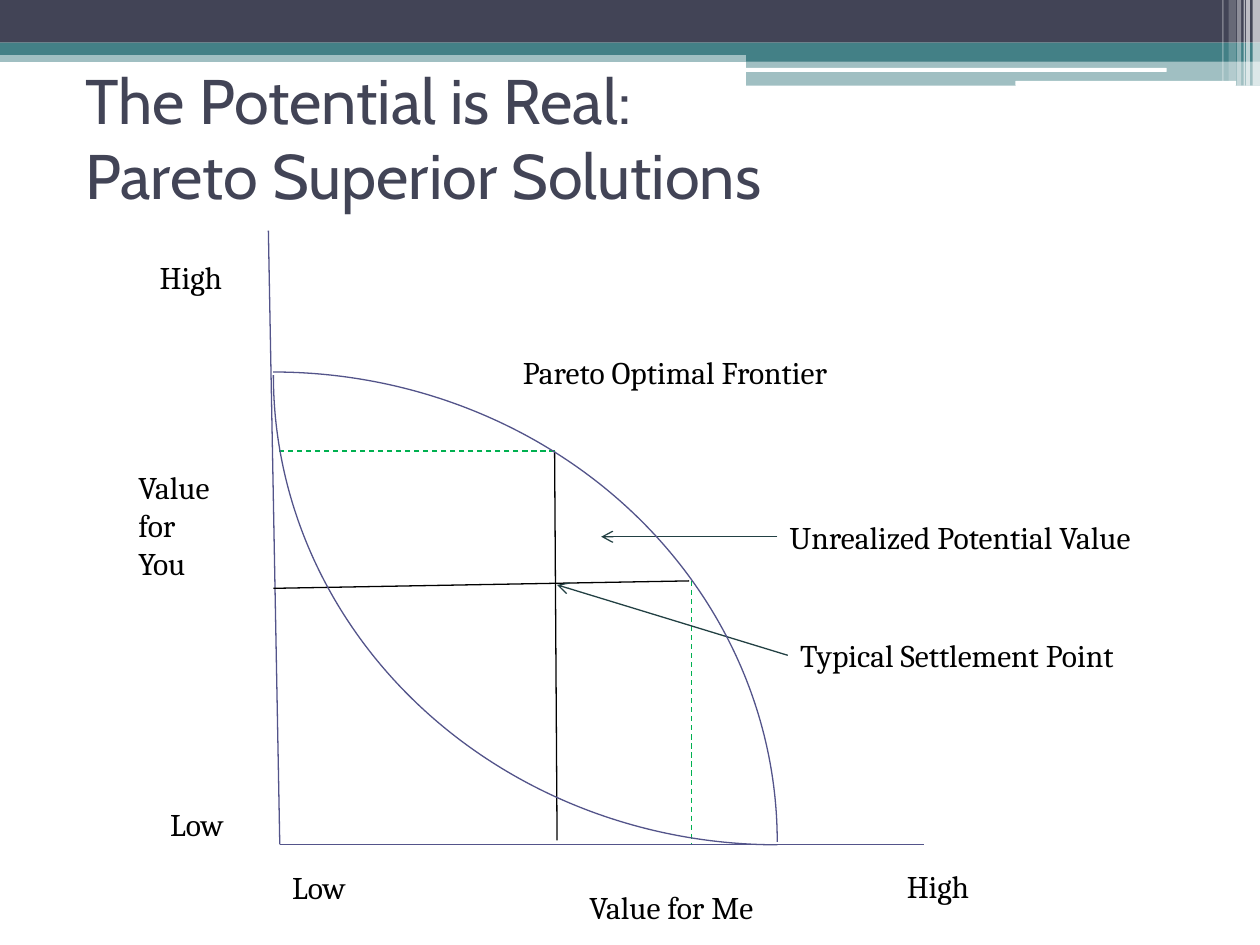
from lxml.etree import SubElement
from pptx import Presentation
from pptx.dml.color import RGBColor
from pptx.enum.dml import MSO_LINE
from pptx.enum.shapes import MSO_CONNECTOR, MSO_SHAPE
from pptx.enum.text import MSO_ANCHOR, MSO_AUTO_SIZE
from pptx.oxml.ns import qn
from pptx.util import Cm, Pt


class Theme:
    dark = "424456"
    teal = "438086"
    white = "FFFFFF"
    black = "000000"
    curve = "53548A"
    arrow = "224043"
    dashed = "00B050"
    heading_font, heading_size = "Cabin", 36
    label_font, label_size = "Cambria", 18
    line_width = 0.75


# All lengths below are centimetres.
PAGE_WIDTH, PAGE_HEIGHT = 25.4, 19.05
TITLE = "The Potential is Real:\vPareto Superior Solutions"
TITLE_BOX = (1.47, 1.27, 22.86, 2.97)

# left, top, width, height, colour, opacity in percent
BANDS = [
    (0, 1.02, PAGE_WIDTH, 0.23, Theme.teal, 50),
    (0, 0, PAGE_WIDTH, 0.86, Theme.dark, 100),
    (0, 0.86, PAGE_WIDTH, 0.25, Theme.teal, 100),
    (15.04, 0.99, 10.36, 0.25, Theme.teal, 100),
    (15.04, 1.22, 10.36, 0.51, Theme.teal, 50),
]
ROUNDED_BARS = [(15.01, 1.37, 8.51, 0.08), (20.47, 1.63, 4.45, 0.1)]
# left, width, height, opacity in percent
STRIPES = [
    (25.25, 0.15, 1.73, 65),
    (25.12, 0.08, 1.73, 65),
    (25.07, 0.03, 1.73, 60),
    (24.94, 0.08, 1.73, 40),
    (24.77, 0.15, 1.63, 20),
    (24.64, 0.03, 1.63, 30),
]

LABEL_HEIGHT = 1.02
# text, left, top, width, height
LABELS = [
    ("Value\nfor\nYou", 2.54, 9.32, 2.24, 2.57),
    ("Value for Me", 11.63, 17.78, 4.34, LABEL_HEIGHT),
    ("Pareto Optimal Frontier", 10.29, 6.99, 7.75, LABEL_HEIGHT),
    ("Low", 5.64, 17.37, 1.75, LABEL_HEIGHT),
    ("High", 2.97, 5.08, 1.98, LABEL_HEIGHT),
    ("High", 18.03, 17.35, 1.98, LABEL_HEIGHT),
    ("Low", 3.18, 16.1, 1.75, LABEL_HEIGHT),
]
# text, left, top, width, arrow tip
CALLOUTS = [
    ("Unrealized Potential Value", 15.67, 10.31, 8.59, (12.12, 10.82)),
    ("Typical Settlement Point", 15.88, 12.7, 7.92, (11.23, 11.79)),
]

ORIGIN = (5.64, 17.02)
UPPER_DEAL = (11.18, 9.09)
RIGHT_DEAL = (13.94, 11.71)
# start, end, colour, dashed
LINES = [
    ((5.41, 4.65), ORIGIN, Theme.curve, False),
    (ORIGIN, (18.62, ORIGIN[1]), Theme.curve, False),
    ((5.51, 11.86), (13.89, 11.71), Theme.black, False),
    ((11.23, 16.94), UPPER_DEAL, Theme.black, False),
    (RIGHT_DEAL, (RIGHT_DEAL[0], ORIGIN[1]), Theme.dashed, True),
    (UPPER_DEAL, (5.56, UPPER_DEAL[1]), Theme.dashed, True),
]
RADIUS_X, RADIUS_Y = 10.16, 9.47
# centre x, centre y, rotation
ARCS = [(5.51, 16.97, 0), (15.67, 7.56, 180)]


def lengths(*values):
    return [Cm(value) for value in values]


def style_line(line, color):
    line.color.rgb = RGBColor.from_string(color)
    line.width = Pt(Theme.line_width)


def add_bar(page, left, top, width, height, color, opacity=100,
            kind=MSO_SHAPE.RECTANGLE):
    bar = page.shapes.add_shape(kind, *lengths(left, top, width, height))
    bar.shadow.inherit = False
    bar.line.fill.background()
    bar.fill.solid()
    bar.fill.fore_color.rgb = RGBColor.from_string(color)
    if opacity < 100:
        tint = bar._element.spPr.find(f"{qn('a:solidFill')}/{qn('a:srgbClr')}")
        SubElement(tint, qn("a:alpha"), val=str(opacity * 1000))


def add_text(page, text, left, top, width, height, *, font=Theme.label_font,
             size=Theme.label_size, color=Theme.black, wrap=False,
             anchor=MSO_ANCHOR.TOP, fit=MSO_AUTO_SIZE.SHAPE_TO_FIT_TEXT):
    box = page.shapes.add_textbox(*lengths(left, top, width, height))
    frame = box.text_frame
    frame.text = text
    frame.word_wrap = wrap
    frame.auto_size = fit
    frame.vertical_anchor = anchor
    for para in frame.paragraphs:
        for span in para.runs:
            span.font.name = font
            span.font.size = Pt(size)
            span.font.color.rgb = RGBColor.from_string(color)
    return box


def add_line(page, start, end, color, dashed=False, arrow=False):
    line = page.shapes.add_connector(
        MSO_CONNECTOR.STRAIGHT, *lengths(*start, *end))
    style_line(line.line, color)
    if dashed:
        line.line.dash_style = MSO_LINE.DASH
    properties = line._element.spPr
    if arrow:
        SubElement(properties.find(qn("a:ln")), qn("a:tailEnd"), type="arrow")
    SubElement(properties, qn("a:effectLst"))
    return line


def add_arc(page, center_x, center_y, rotation):
    """Draw a quarter ellipse around the given centre."""
    arc = page.shapes.add_shape(MSO_SHAPE.ARC, *lengths(
        center_x - RADIUS_X, center_y - RADIUS_Y, 2 * RADIUS_X, 2 * RADIUS_Y))
    arc.rotation = rotation
    arc.shadow.inherit = False
    arc.fill.background()
    style_line(arc.line, Theme.curve)


def main():
    deck = Presentation()
    deck.slide_width, deck.slide_height = lengths(PAGE_WIDTH, PAGE_HEIGHT)
    page = deck.slides.add_slide(deck.slide_layouts[6])

    for band in BANDS:
        add_bar(page, *band)
    for bar in ROUNDED_BARS:
        add_bar(page, *bar, Theme.white, kind=MSO_SHAPE.ROUNDED_RECTANGLE)
    for left, width, height, opacity in STRIPES:
        add_bar(page, left, 0, width, height, Theme.white, opacity)

    add_text(page, TITLE, *TITLE_BOX, font=Theme.heading_font,
             size=Theme.heading_size, color=Theme.dark, wrap=True,
             anchor=MSO_ANCHOR.MIDDLE, fit=MSO_AUTO_SIZE.NONE)
    for line in LINES:
        add_line(page, *line)
    for label in LABELS:
        add_text(page, *label)
    for text, left, top, width, tip in CALLOUTS:
        box = add_text(page, text, left, top, width, LABEL_HEIGHT)
        start = (left, top + LABEL_HEIGHT / 2)
        pointer = add_line(page, start, tip, Theme.arrow, arrow=True)
        pointer.begin_connect(box, 1)
    for arc in ARCS:
        add_arc(page, *arc)

    deck.save("out.pptx")


if __name__ == "__main__":
    main()
